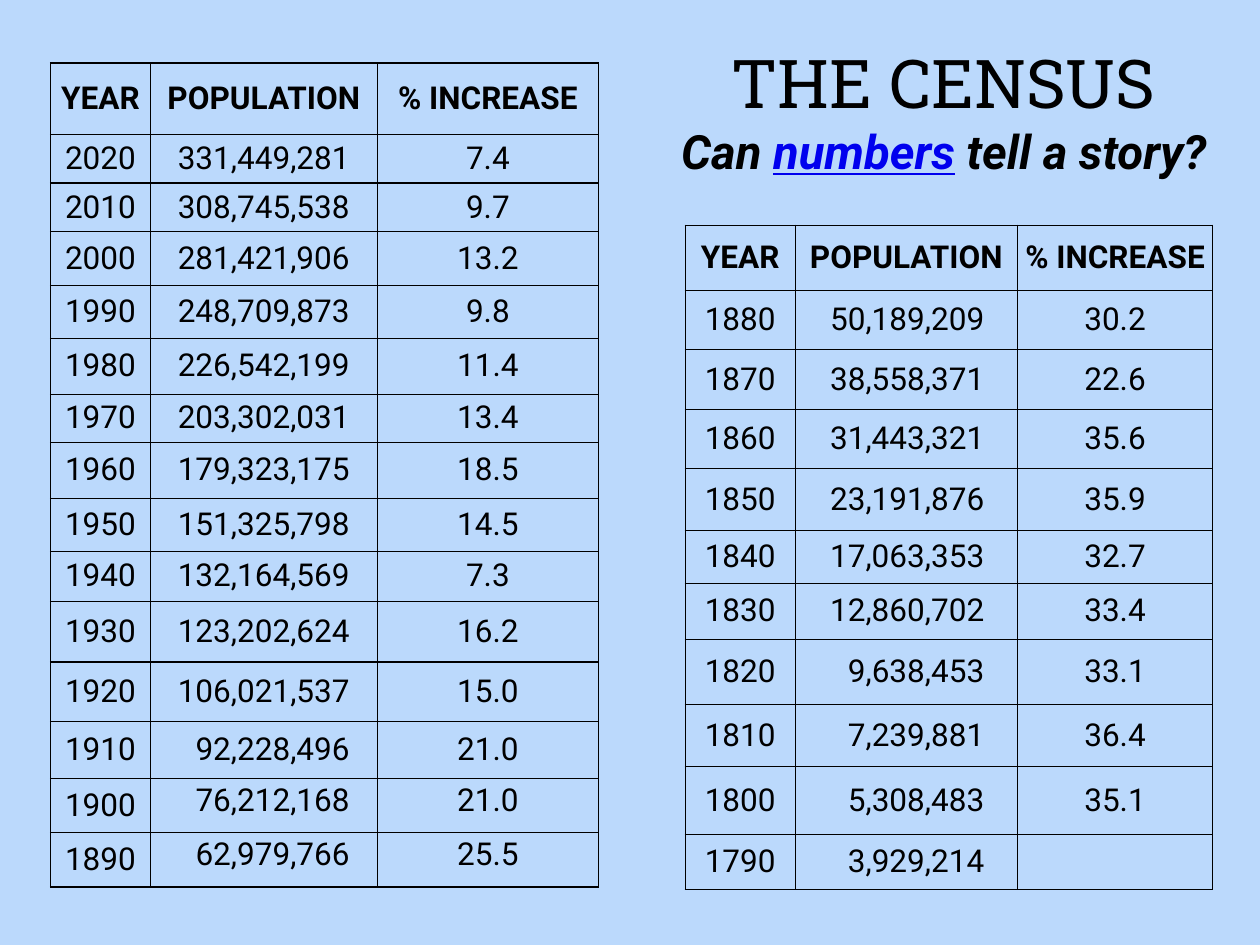
from lxml.etree import SubElement
from pptx import Presentation
from pptx.dml.color import RGBColor
from pptx.enum.text import MSO_ANCHOR, PP_ALIGN
from pptx.oxml.ns import qn
from pptx.util import Pt

BLACK, LINK_BLUE, SKY = "000000", "0000EE", "BBD9FC"
HEADINGS = ("YEAR", "POPULATION", "% INCREASE")
RECENT_CENSUSES = [
    ("2020", "331,449,281", "7.4"),
    ("2010", "308,745,538", "9.7"),
    ("2000", "281,421,906", "13.2"),
    ("1990", "248,709,873", "9.8"),
    ("1980", "226,542,199", "11.4"),
    ("1970", "203,302,031", "13.4"),
    ("1960", "179,323,175", "18.5"),
    ("1950", "151,325,798", "14.5"),
    ("1940", "132,164,569", "7.3"),
    ("1930", "123,202,624", "16.2"),
    ("1920", "106,021,537", "15.0"),
    ("1910", "92,228,496", "21.0"),
    ("1900", "76,212,168", "21.0"),
    ("1890", "62,979,766", "25.5"),
]
EARLY_CENSUSES = [
    ("1880", "50,189,209", "30.2"),
    ("1870", "38,558,371", "22.6"),
    ("1860", "31,443,321", "35.6"),
    ("1850", "23,191,876", "35.9"),
    ("1840", "17,063,353", "32.7"),
    ("1830", "12,860,702", "33.4"),
    ("1820", "9,638,453", "33.1"),
    ("1810", "7,239,881", "36.4"),
    ("1800", "5,308,483", "35.1"),
    ("1790", "3,929,214", ""),
]
TABLES = [
    {"left": 32, "top": 40, "censuses": RECENT_CENSUSES, "number_margin": 17.5,
     "top_anchored": ("1900", "1890"), "widths": (63.6, 144, 140.4),
     "heights": (45.1, 31.1, 30.8, 34, 33.7, 35.6, 30.5, 35.6, 33.7, 31.7,
                 38.7, 37.5, 36.8, 34.3, 34.3)},
    {"left": 435, "top": 143, "censuses": EARLY_CENSUSES, "number_margin": 21,
     "top_anchored": (), "widths": (70, 141, 124),
     "heights": (41.3, 37.5, 38.1, 37.5, 39.4, 33.6, 35.6, 41.3, 39.4, 43.5, 34.6)},
]
TITLE_LINES = [
    [("THE CENSUS", {"size": 42.7, "font": "Roboto Slab"})],
    [("Can ", {"size": 30, "bold": True, "italic": True}),
     ("numbers", {"size": 30, "bold": True, "italic": True,
                  "underline": True, "color": LINK_BLUE}),
     (" tell a story?", {"size": 30, "bold": True, "italic": True})],
]


def rgb(color):
    """Turn a hex string into a colour."""
    return RGBColor.from_string(color)


def add_run(paragraph, text, size=20, font="Roboto", bold=False, italic=False,
            underline=False, color=BLACK):
    """Append one styled run to a paragraph."""
    run = paragraph.add_run()
    run.text = text
    run.font.size = Pt(size)
    run.font.name = font
    run.font.bold = bold
    run.font.italic = italic
    run.font.underline = underline
    run.font.color.rgb = rgb(color)


def add_title(slide):
    """Add the heading and its subtitle."""
    frame = slide.shapes.add_textbox(Pt(428.5), Pt(23.5), Pt(341.5), Pt(78)).text_frame
    frame.word_wrap = True
    frame.margin_left = frame.margin_right = Pt(3)
    frame.margin_top = frame.margin_bottom = Pt(3)
    for index, runs in enumerate(TITLE_LINES):
        paragraph = frame.add_paragraph() if index else frame.paragraphs[0]
        paragraph.alignment = PP_ALIGN.CENTER
        for text, style in runs:
            add_run(paragraph, text, **style)


def add_borders(cell):
    """Draw a thin black line on all four sides of a cell."""
    properties = cell._tc.get_or_add_tcPr()
    for side in ("a:lnL", "a:lnR", "a:lnT", "a:lnB"):
        line = SubElement(properties, qn(side), w=str(Pt(0.75)))
        fill = SubElement(line, qn("a:solidFill"))
        SubElement(fill, qn("a:srgbClr"), val=BLACK)


def fill_cell(cell, text, anchor, alignment, right_margin, bold):
    """Style one cell and write its text."""
    add_borders(cell)
    cell.fill.background()
    cell.margin_left = cell.margin_top = cell.margin_bottom = Pt(2)
    cell.margin_right = Pt(right_margin)
    cell.vertical_anchor = anchor
    paragraph = cell.text_frame.paragraphs[0]
    paragraph.alignment = alignment
    if text:
        add_run(paragraph, text, bold=bold)


def add_census_table(slide, left, top, censuses, number_margin, top_anchored,
                     widths, heights):
    """Add one table of years, populations and increases."""
    rows = [HEADINGS, *censuses]
    table = slide.shapes.add_table(
        len(rows), len(HEADINGS), Pt(left), Pt(top), Pt(sum(widths)), Pt(sum(heights))
    ).table
    table.first_row = table.horz_banding = False
    for column, width in zip(table.columns, widths):
        column.width = Pt(width)
    for row, height in zip(table.rows, heights):
        row.height = Pt(height)
    for row_index, values in enumerate(rows):
        for column_index, text in enumerate(values):
            is_heading = row_index == 0
            is_number = column_index == 1 and not is_heading
            at_top = column_index > 0 and values[0] in top_anchored
            fill_cell(
                table.cell(row_index, column_index), text,
                MSO_ANCHOR.TOP if at_top else MSO_ANCHOR.MIDDLE,
                PP_ALIGN.RIGHT if is_number else PP_ALIGN.CENTER,
                number_margin if is_number else 2, is_heading)


def main():
    """Build the census slide."""
    presentation = Presentation()
    presentation.slide_width, presentation.slide_height = Pt(800), Pt(600)
    slide = presentation.slides.add_slide(presentation.slide_layouts[6])
    slide.background.fill.solid()
    slide.background.fill.fore_color.rgb = rgb(SKY)
    add_title(slide)
    for table in TABLES:
        add_census_table(slide, **table)
    presentation.save("out.pptx")


if __name__ == "__main__":
    main()
